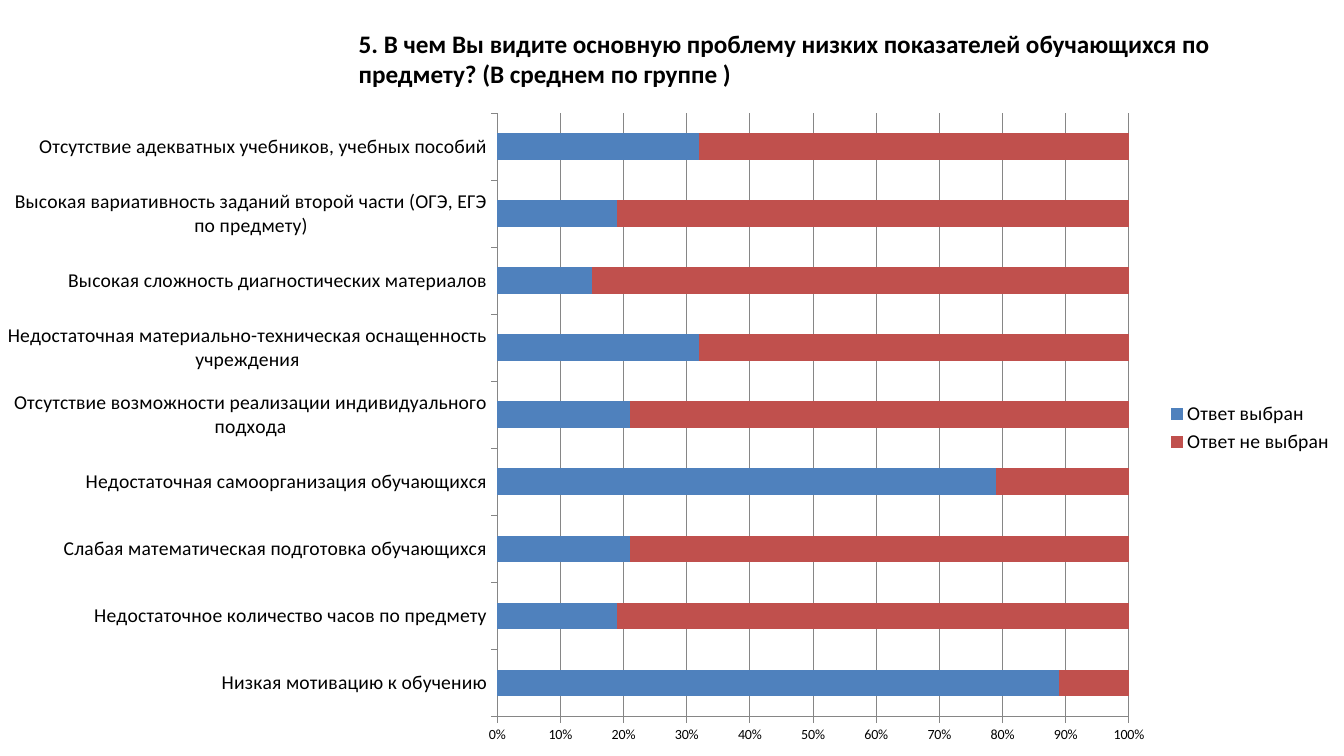
from dataclasses import dataclass

from lxml import etree
from pptx import Presentation
from pptx.chart.chart import Chart
from pptx.chart.data import CategoryChartData
from pptx.dml.color import RGBColor
from pptx.enum.chart import XL_CHART_TYPE as ChartType
from pptx.enum.chart import XL_LEGEND_POSITION as LegendPos
from pptx.enum.chart import XL_TICK_MARK as Tick
from pptx.enum.text import MSO_ANCHOR, MSO_AUTO_SIZE, PP_ALIGN
from pptx.oxml.ns import qn
from pptx.util import Pt

FONT = "Calibri"
BLACK, GRID_GREY = "000000", "868686"
CHOSEN_BLUE, OTHER_RED = "4F81BD", "C0504D"
TITLE = ("5. В чем Вы видите основную проблему низких показателей "
         "обучающихся по предмету? (В среднем по группе )")


@dataclass
class Problem:
    label: str
    chosen: int  # percent of respondents


PROBLEMS = [
    Problem("Низкая мотивацию к обучению", 89),
    Problem("Недостаточное количество часов по предмету", 19),
    Problem("Слабая математическая подготовка обучающихся", 21),
    Problem("Недостаточная самоорганизация обучающихся", 79),
    Problem("Отсутствие возможности реализации индивидуального подхода", 21),
    Problem("Недостаточная материально-техническая оснащенность учреждения", 32),
    Problem("Высокая сложность диагностических материалов", 15),
    Problem("Высокая вариативность заданий второй части (ОГЭ, ЕГЭ по предмету)", 19),
    Problem("Отсутствие адекватных учебников, учебных пособий", 32),
]


def rgb(value: str) -> RGBColor:
    return RGBColor.from_string(value)


def set_font(font, size: float, bold: bool = False) -> None:
    font.name, font.size, font.bold = FONT, Pt(size), bold
    font.color.rgb = rgb(BLACK)


def set_line(line) -> None:
    line.color.rgb = rgb(GRID_GREY)
    line.width = Pt(0.75)


def place_plot(chart: Chart, x: float, y: float, w: float, h: float) -> None:
    """Fix the inner plot area, in fractions of the chart frame."""
    plot_area = chart.plots[0]._element.getparent()
    for old in plot_area.findall(qn("c:layout")):
        plot_area.remove(old)
    layout = etree.Element(qn("c:layout"))
    manual = etree.SubElement(layout, qn("c:manualLayout"))
    settings = {"layoutTarget": "inner", "xMode": "edge", "yMode": "edge",
                "x": x, "y": y, "w": w, "h": h}
    for tag, value in settings.items():
        etree.SubElement(manual, qn(f"c:{tag}")).set("val", str(value))
    plot_area.insert(0, layout)


def add_title(s) -> None:
    title = s.shapes.title
    title.left, title.top, title.width, title.height = Pt(249), Pt(16.5), Pt(641.5), Pt(75)
    tf = title.text_frame
    tf.word_wrap, tf.auto_size = True, MSO_AUTO_SIZE.NONE
    tf.vertical_anchor = MSO_ANCHOR.TOP
    p = tf.paragraphs[0]
    p.text, p.alignment = TITLE, PP_ALIGN.LEFT
    set_font(p.font, 18, bold=True)


def add_answers_chart(s) -> None:
    data = CategoryChartData(number_format="General")
    data.categories = [problem.label for problem in PROBLEMS]
    data.add_series("Ответ выбран", [problem.chosen for problem in PROBLEMS])
    data.add_series("Ответ не выбран", [100 - problem.chosen for problem in PROBLEMS])
    chart = s.shapes.add_chart(ChartType.BAR_STACKED_100, Pt(0), Pt(71.5),
                               Pt(960), Pt(468.5), data).chart
    chart.has_title = False
    set_font(chart.font, 10)

    plot = chart.plots[0]
    plot.gap_width, plot.overlap, plot.vary_by_categories = 150, 100, False
    for series, color in zip(plot.series, (CHOSEN_BLUE, OTHER_RED)):
        series.format.fill.solid()
        series.format.fill.fore_color.rgb = rgb(color)

    cat, val = chart.category_axis, chart.value_axis
    for axis, size in ((cat, 14), (val, 10)):
        axis.major_tick_mark, axis.minor_tick_mark = Tick.OUTSIDE, Tick.NONE
        set_font(axis.tick_labels.font, size)
        set_line(axis.format.line)
    val.minimum_scale, val.maximum_scale, val.major_unit = 0, 1, 0.1
    val.tick_labels.number_format = "0%"
    val.tick_labels.number_format_is_linked = False
    val.has_major_gridlines = True
    set_line(val.major_gridlines.format.line)

    chart.has_legend = True
    chart.legend.position = LegendPos.RIGHT
    chart.legend.include_in_layout = False
    set_font(chart.legend.font, 14)
    place_plot(chart, 0.37, 0.02, 0.47, 0.92)


def main() -> None:
    prs = Presentation()
    prs.slide_width, prs.slide_height = Pt(960), Pt(540)
    s = prs.slides.add_slide(prs.slide_layouts[5])
    add_title(s)
    add_answers_chart(s)
    prs.save("out.pptx")


if __name__ == "__main__":
    main()
